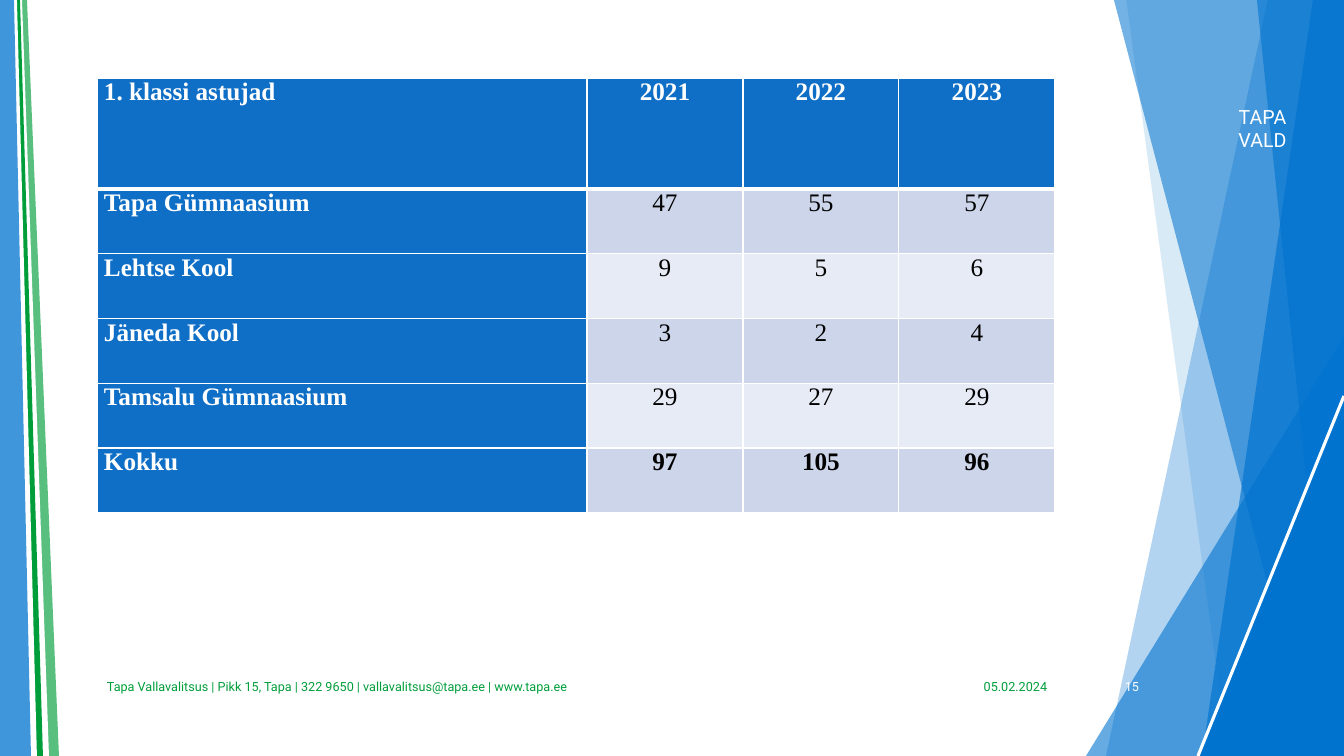
import collections
import dataclasses

import lxml.etree
import pptx
import pptx.dml.color
import pptx.enum.shapes
import pptx.enum.text
import pptx.oxml.ns
import pptx.util

PX = 914400 / 100.8
ALIGN = pptx.enum.text.PP_ALIGN
Box = collections.namedtuple("Box", "x y w h")


@dataclasses.dataclass(frozen=True)
class Theme:
    blue: str = "0073CF"
    green: str = "009E3B"
    white: str = "FFFFFF"
    black: str = "000000"
    header: str = "0F6FC6"
    bands: tuple = ("CCD5EA", "E7EBF5")
    sans: str = "Roboto"
    serif: str = "Times New Roman"
    badge_size: int = 14
    table_size: int = 18
    footer_size: int = 9


THEME = Theme()

ENTRANTS = [
    ("1. klassi astujad", "2021", "2022", "2023"),
    ("Tapa Gümnaasium", "47", "55", "57"),
    ("Lehtse Kool", "9", "5", "6"),
    ("Jäneda Kool", "3", "2", "4"),
    ("Tamsalu Gümnaasium", "29", "27", "29"),
    ("Kokku", "97", "105", "96"),
]


def emu(*lengths):
    return [pptx.util.Emu(round(n * PX)) for n in lengths]


def rgb(color):
    return pptx.dml.color.RGBColor.from_string(color)


def paint(shape, color, opacity=100):
    """Give a shape a flat fill with no outline or shadow."""
    shape.shadow.inherit = False
    shape.line.fill.background()
    shape.fill.solid()
    shape.fill.fore_color.rgb = rgb(color)
    if opacity < 100:
        clr = shape.fill._xPr.find(".//" + pptx.oxml.ns.qn("a:srgbClr"))
        lxml.etree.SubElement(clr, pptx.oxml.ns.qn("a:alpha"), val=str(opacity * 1000))


def add_polygon(s, points, color, opacity=100):
    builder = s.shapes.build_freeform(*points[0], scale=PX)
    builder.add_line_segments(points[1:], close=True)
    paint(builder.convert_to_shape(), color, opacity)


def set_font(p, size, name, color, bold=False):
    p.font.size = pptx.util.Pt(size)
    p.font.name = name
    p.font.color.rgb = rgb(color)
    p.font.bold = bold


def add_label(s, box, text, size, color, align, margin=10):
    tf = s.shapes.add_textbox(*emu(*box)).text_frame
    tf.word_wrap = True
    tf.vertical_anchor = pptx.enum.text.MSO_ANCHOR.MIDDLE
    tf.margin_left, tf.margin_right = emu(margin, margin)
    p = tf.paragraphs[0]
    p.text = text
    p.alignment = align
    set_font(p, size, THEME.sans, color)


def add_corner_triangle(s, box, top, left, opacity=100):
    """Right triangle filling the lower right corner of the box."""
    tri = s.shapes.add_shape(
        pptx.enum.shapes.MSO_SHAPE.ISOSCELES_TRIANGLE,
        *emu(box.x + left, box.y + top, box.w - left, box.h - top))
    tri.adjustments[0] = 1.0
    paint(tri, THEME.blue, opacity)


def add_facets(s, box):
    """Overlapping translucent blue planes along the right edge."""
    right = box.x + box.w

    def add_plane(top_left, bottom_left, shift, opacity):
        top, bottom = box.y + shift, box.y + box.h + 1 + shift
        add_polygon(s, [(box.x + top_left, top), (right, top), (right, bottom),
                        (box.x + bottom_left, bottom)], THEME.blue, opacity)

    add_plane(182, 20, -1, 30)
    add_plane(40, 142, -3, 15)
    add_corner_triangle(s, box, 336, 0, 60)
    for plane in [(28, 227, 0, 55), (227, 116, 0, 65), (171, 249, 0, 60)]:
        add_plane(*plane)
    add_corner_triangle(s, box, 396, 112)

    edge = s.shapes.add_connector(
        pptx.enum.shapes.MSO_CONNECTOR.STRAIGHT,
        *emu(right, box.y + 396, box.x + 112, box.y + box.h))
    edge.line.color.rgb = rgb(THEME.white)
    edge.line.width = pptx.util.Pt(2.25)
    lxml.etree.SubElement(edge._element.spPr, pptx.oxml.ns.qn("a:effectLst"))

    add_label(s, Box(box.x + 117, box.y + 111, 119, 34), "TAPA VALD",
              THEME.badge_size, THEME.white, ALIGN.CENTER, margin=14)


def add_stripes(s, box):
    """Slanted stripes on the left edge, widest at the back."""
    bottom = box.y + box.h + 1
    for top_width, bottom_width, color, opacity in [
            (27, 59, THEME.green, 65), (22, 49, THEME.white, 100),
            (20, 43, THEME.green, 100), (17, 37, THEME.white, 100),
            (14, 31, THEME.blue, 75)]:
        add_polygon(s, [(box.x, box.y), (box.x + top_width, box.y),
                        (box.x + bottom_width, bottom), (box.x, bottom)],
                    color, opacity)


def set_borders(cell, top, bottom):
    """White lines on all four sides; top and bottom widths in points."""
    tc_pr = cell._tc.get_or_add_tcPr()
    for i, (side, width) in enumerate([("L", 1), ("R", 1), ("T", top), ("B", bottom)]):
        ln = lxml.etree.Element(pptx.oxml.ns.qn("a:ln" + side),
                                w=str(pptx.util.Pt(width)))
        fill = lxml.etree.SubElement(ln, pptx.oxml.ns.qn("a:solidFill"))
        lxml.etree.SubElement(fill, pptx.oxml.ns.qn("a:srgbClr"), val=THEME.white)
        tc_pr.insert(i, ln)


def add_entrants_table(s, box):
    year_width, header_height = 156, 111
    n_rows, n_cols = len(ENTRANTS), len(ENTRANTS[0])
    table = s.shapes.add_table(n_rows, n_cols, *emu(*box)).table
    table.first_col = True
    for c, col in enumerate(table.columns):
        width = year_width if c else box.w - year_width * (n_cols - 1)
        col.width, = emu(width)
    for r, row in enumerate(table.rows):
        height = (box.h - header_height) / (n_rows - 1) if r else header_height
        row.height, = emu(height)

    for r, values in enumerate(ENTRANTS):
        for c, value in enumerate(values):
            cell = table.cell(r, c)
            is_head = r == 0 or c == 0
            cell.fill.solid()
            cell.fill.fore_color.rgb = rgb(
                THEME.header if is_head else THEME.bands[(r - 1) % 2])
            cell.margin_left, cell.margin_right = emu(7, 7)
            cell.margin_top = cell.margin_bottom = 0
            p = cell.text_frame.paragraphs[0]
            p.text = value
            p.alignment = ALIGN.CENTER if c else ALIGN.JUSTIFY
            set_font(p, THEME.table_size, THEME.serif,
                     THEME.white if is_head else THEME.black,
                     bold=is_head or r == n_rows - 1)
            set_borders(cell, top=3 if r == 1 else 1, bottom=3 if r == 0 else 1)


def add_footer(s, box):
    for left, width, text, color, align in [
            (859, 101, "05.02.2024", THEME.green, ALIGN.RIGHT),
            (0, 841, "Tapa Vallavalitsus | Pikk 15, Tapa | 322 9650 | "
                     "vallavalitsus@tapa.ee | www.tapa.ee", THEME.green, ALIGN.LEFT),
            (977, 75, "15", THEME.white, ALIGN.RIGHT)]:
        add_label(s, Box(box.x + left, box.y, width, box.h), text,
                  THEME.footer_size, color, align)


def main():
    prs = pptx.Presentation()
    prs.slide_width, prs.slide_height = emu(1344, 756)
    s = prs.slides.add_slide(prs.slide_layouts[6])
    add_facets(s, Box(1086, 0, 258, 756))
    add_stripes(s, Box(0, 0, 59, 756))
    add_entrants_table(s, Box(97, 78, 958, 435))
    add_footer(s, Box(97, 667, 1052, 40))
    prs.save("out.pptx")


if __name__ == "__main__":
    main()
